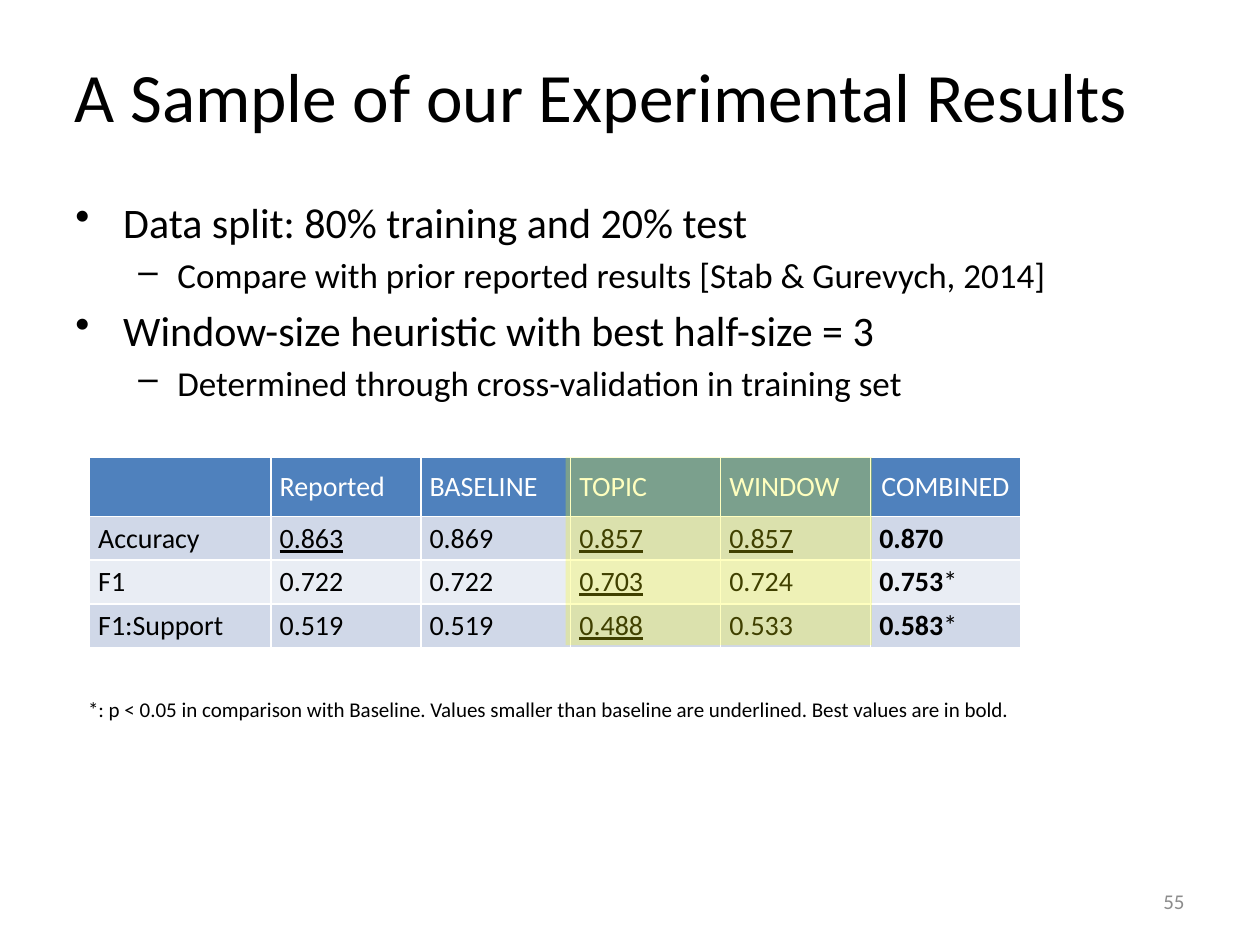
from lxml import etree
from pptx import Presentation
from pptx.dml.color import RGBColor
from pptx.enum.shapes import MSO_SHAPE
from pptx.enum.text import MSO_ANCHOR, MSO_AUTO_SIZE, PP_ALIGN
from pptx.oxml.ns import qn
from pptx.util import Inches, Pt

RECTANGLE = MSO_SHAPE.RECTANGLE
MIDDLE, TOP = MSO_ANCHOR.MIDDLE, MSO_ANCHOR.TOP
NO_AUTOFIT = MSO_AUTO_SIZE.NONE
LEFT, CENTER, RIGHT = PP_ALIGN.LEFT, PP_ALIGN.CENTER, PP_ALIGN.RIGHT

FONT = "Calibri"
BLACK, WHITE, GREY = "000000", "FFFFFF", "8C8C8C"
HEADER_FILL, BAND_FILLS = "4F81BD", ("D0D8E8", "E9EDF4")

# Outline level: bullet, text size, left margin, hanging indent
LEVELS = (("•", 24, 0.38, 0.38), ("–", 20, 0.81, 0.31))
POINTS = (
    (0, "Data split: 80% training and 20% test"),
    (1, "Compare with prior reported results [Stab & Gurevych, 2014]"),
    (0, "Window-size heuristic with best half-size = 3"),
    (1, "Determined through cross-validation in training set"),
)

HEADERS = ("", "Reported", "BASELINE", "TOPIC", "WINDOW", "COMBINED")
BASELINE = HEADERS.index("BASELINE") - 1
# Measure, values, mark for significance on the combined value
RESULTS = (
    ("Accuracy", ("0.863", "0.869", "0.857", "0.857", "0.870"), ""),
    ("F1", ("0.722", "0.722", "0.703", "0.724", "0.753"), "*"),
    ("F1:Support", ("0.519", "0.519", "0.488", "0.533", "0.583"), "*"),
)


def color(value):
    return RGBColor.from_string(value)


def style(para, size, ink=BLACK, align=LEFT):
    para.alignment = align
    font = para.font
    font.name, font.size, font.bold = FONT, Pt(size), False
    font.color.rgb = color(ink)


def place(shape, box):
    shape.left, shape.top, shape.width, shape.height = map(Inches, box)


def add_title(slide, box, text):
    title = slide.shapes.title
    place(title, box)
    frame = title.text_frame
    frame.text = text
    frame.auto_size = NO_AUTOFIT
    frame.vertical_anchor = MIDDLE
    style(frame.paragraphs[0], 39.6, align=CENTER)


def add_text(slide, box, text="", size=12, ink=BLACK, align=LEFT, anchor=MIDDLE):
    frame = slide.shapes.add_textbox(*map(Inches, box)).text_frame
    frame.word_wrap = True
    frame.vertical_anchor = anchor
    frame.text = text
    style(frame.paragraphs[0], size, ink, align)
    return frame


def add_points(slide, box, points):
    frame = add_text(slide, box, anchor=TOP)
    for index, (level, text) in enumerate(points):
        para = frame.add_paragraph() if index else frame.paragraphs[0]
        bullet, size, margin, hanging = LEVELS[level]
        para.text = text
        para.level = level
        style(para, size)
        para.space_before = Pt(size * 0.2)
        properties = para._p.get_or_add_pPr()
        properties.set("marL", str(Inches(margin)))
        properties.set("indent", str(-Inches(hanging)))
        mark = etree.Element(qn("a:buChar"), char=bullet)
        properties.find(qn("a:defRPr")).addprevious(mark)


def fill_cell(cell, text, fill, ink=BLACK, align=LEFT):
    cell.fill.solid()
    cell.fill.fore_color.rgb = color(fill)
    cell.vertical_anchor = MIDDLE
    cell.margin_left = cell.margin_right = Inches(0.07)
    cell.margin_top = cell.margin_bottom = Inches(0.04)
    para = cell.text_frame.paragraphs[0]
    style(para, 16, ink, align)
    span = para.add_run()
    span.text = text
    span.font.bold = False
    return para


def add_results(slide, box):
    size = (len(RESULTS) + 1, len(HEADERS))
    table = slide.shapes.add_table(*size, *map(Inches, box)).table
    for index, column in enumerate(table.columns):
        column.width = Inches(1.19 if index else 1.44)
    for index, row in enumerate(table.rows):
        row.height = Inches(0.34 if index else 0.47)

    # Header row
    for index, text in enumerate(HEADERS):
        align = CENTER if text == "COMBINED" else LEFT
        fill_cell(table.cell(0, index), text, HEADER_FILL, WHITE, align)

    # Below baseline is underlined, the best value is bold
    for row, (measure, values, mark) in enumerate(RESULTS, 1):
        fill = BAND_FILLS[(row - 1) % 2]
        fill_cell(table.cell(row, 0), measure, fill)
        for column, value in enumerate(values, 1):
            para = fill_cell(table.cell(row, column), value, fill)
            font = para.runs[0].font
            font.underline = float(value) < float(values[BASELINE])
            font.bold = value == max(values)
        if mark:
            span = para.add_run()
            span.text = mark
            span.font.bold = False


def add_highlight(slide, box, fill, percent):
    shape = slide.shapes.add_shape(RECTANGLE, *map(Inches, box))
    shape.shadow.inherit = False
    shape.line.fill.background()
    shape.fill.solid()
    shape.fill.fore_color.rgb = color(fill)
    tint = shape._element.spPr.find(qn("a:solidFill"))[0]
    etree.SubElement(tint, qn("a:alpha"), val=str(percent * 1000))


def main():
    deck = Presentation()
    deck.slide_width, deck.slide_height = Inches(10), Inches(7.5)
    slide = deck.slides.add_slide(deck.slide_layouts.get_by_name("Title Only"))

    add_title(slide, (0.27, 0.13, 9, 1.25), "A Sample of our Experimental Results")
    add_points(slide, (0.5, 1.51, 9, 4.95), POINTS)
    add_text(slide, (7.17, 6.95, 2.33, 0.4), "55", ink=GREY, align=RIGHT)
    add_results(slide, (0.71, 3.63, 7.39, 1.49))
    add_text(slide, (0.6, 5.48, 7.55, 0.3),
             "*: p < 0.05 in comparison with Baseline. Values smaller than "
             "baseline are underlined. Best values are in bold.")
    # Tint over the topic and window columns
    add_highlight(slide, (4.49, 3.63, 2.43, 1.49), "FFFF00", 25)

    deck.save("out.pptx")


if __name__ == "__main__":
    main()
